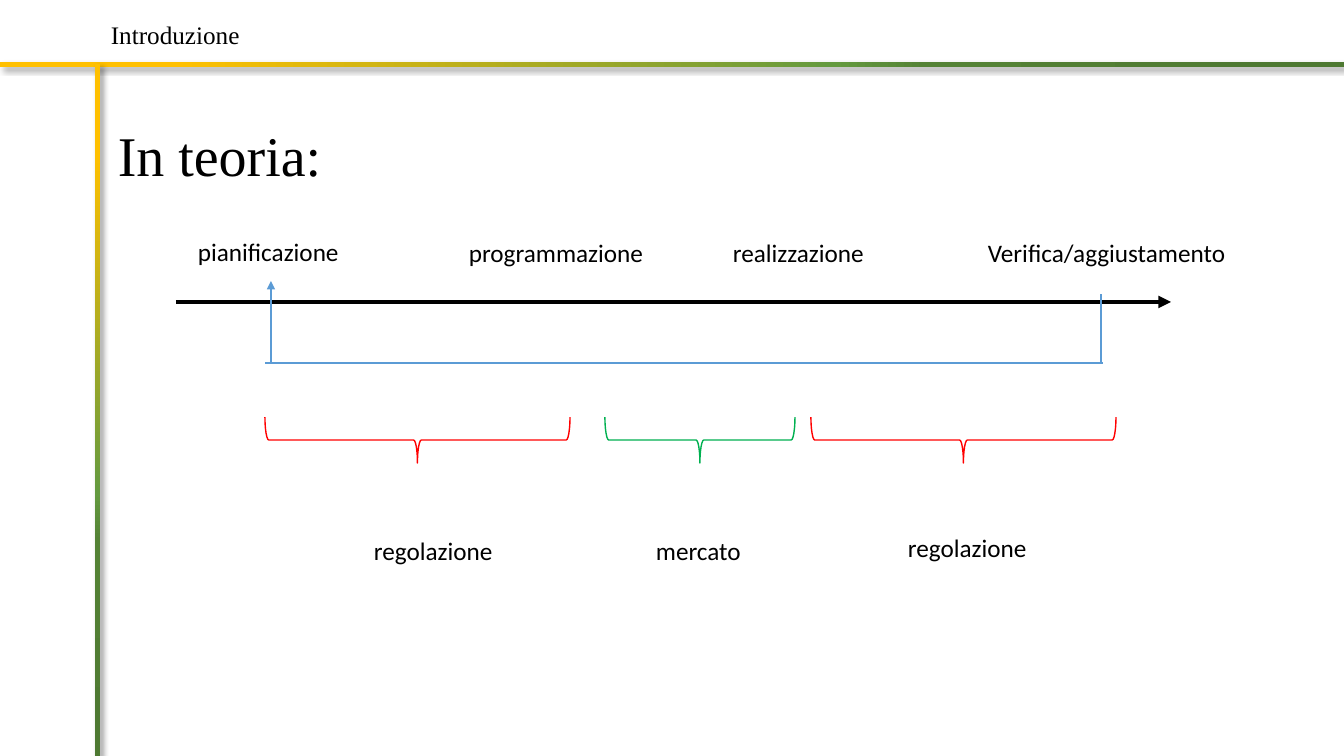
from lxml import etree
from pptx import Presentation, util as u
from pptx.dml.color import RGBColor
from pptx.enum import shapes, text
from pptx.oxml import parse_xml
from pptx.oxml.ns import nsdecls, qn

PX = 914400 / 100.8
BLACK = RGBColor(0x00, 0x00, 0x00)
BLUE = RGBColor(0x5B, 0x9B, 0xD5)
RED = RGBColor(0xFF, 0x00, 0x00)
GREEN = RGBColor(0x00, 0xB0, 0x50)
BAR_STOPS = [
    (13, RGBColor(0xFF, 0xC0, 0x00)),
    (62, RGBColor(0x64, 0x9A, 0x3F)),
    (69, RGBColor(0x54, 0x82, 0x35)),
    (97, RGBColor(0x4E, 0x79, 0x32)),
]


def px(*lengths):
    return [u.Emu(round(n * PX)) for n in lengths]


def write(tf, content, font="Calibri", size=18, color=BLACK, align=None):
    p = tf.paragraphs[0]
    p.alignment = align
    r = p.add_run()
    r.text = content
    r.font.name = font
    r.font.size = u.Pt(size)
    r.font.color.rgb = color


class Deck:
    serif = "Times New Roman"

    def __init__(self, width, height):
        self.prs = Presentation()
        self.prs.slide_width, self.prs.slide_height = px(width, height)
        self.s = self.prs.slides.add_slide(self.prs.slide_layouts[6])

    def label(self, x, y, w, h, content, **fmt):
        tf = self.s.shapes.add_textbox(*px(x, y, w, h)).text_frame
        tf.word_wrap = True
        tf.auto_size = text.MSO_AUTO_SIZE.SHAPE_TO_FIT_TEXT
        write(tf, content, **fmt)

    def bar(self, x, y, w, h, angle):
        sp = self.s.shapes.add_shape(shapes.MSO_SHAPE.RECTANGLE, *px(x, y, w, h))
        sp.line.fill.background()
        sp.fill.gradient()
        sp.fill.gradient_angle = angle
        stops = sp._element.spPr.find(".//" + qn("a:gsLst"))
        for old in list(stops):
            stops.remove(old)
        for pos, color in BAR_STOPS:
            gs = etree.SubElement(stops, qn("a:gs"), pos=str(pos * 1000))
            etree.SubElement(gs, qn("a:srgbClr"), val=str(color))
        sp._element.spPr.append(parse_xml(
            f'<a:effectLst {nsdecls("a")}><a:outerShdw blurRad="50800" dist="38100" '
            'dir="2700000" algn="tl" rotWithShape="0"><a:srgbClr val="000000">'
            '<a:alpha val="40000"/></a:srgbClr></a:outerShdw></a:effectLst>'))

    def line(self, x1, y1, x2, y2, color, width=1, arrow=False):
        c = self.s.shapes.add_connector(
            shapes.MSO_CONNECTOR.STRAIGHT, *px(x1, y1, x2, y2))
        c.line.color.rgb = color
        c.line.width = u.Pt(width)
        if arrow:
            etree.SubElement(c.line._get_or_add_ln(), qn("a:tailEnd"), type="triangle")
        etree.SubElement(c._element.spPr, qn("a:effectLst"))

    def brace(self, x, y, w, h, color):
        """Brace pointing down, given by the box it covers once turned."""
        left, top = x + (w - h) / 2, y + (h - w) / 2
        sp = self.s.shapes.add_shape(shapes.MSO_SHAPE.LEFT_BRACE, *px(left, top, h, w))
        sp.rotation = 270
        sp.shadow.inherit = False
        sp.fill.background()
        sp.line.color.rgb = color
        sp.line.width = u.Pt(1)


def main():
    d = Deck(1344, 756)

    # Frame bars
    d.bar(0, 62, 1344, 5, angle=0)
    d.bar(95, 64, 5, 692, angle=270)

    # Headings
    d.label(101, 14, 1128, 40, "Introduzione", font=d.serif)
    d.label(108, 116, 1128, 78, "In teoria:", font=d.serif, size=40,
            align=text.PP_ALIGN.JUSTIFY)

    # Timeline and its phases
    d.line(176, 302, 1171, 302, BLACK, width=3, arrow=True)
    for x, y, w, phase in [
        (188, 231, 175, "pianificazione"),
        (459, 232, 199, "programmazione"),
        (723, 232, 175, "realizzazione"),
        (978, 232, 273, "Verifica/aggiustamento"),
    ]:
        d.label(x, y, w, 40, phase)

    # Feedback loop
    d.line(1103, 363, 265, 363, BLUE)
    d.line(1101, 363, 1101, 294, BLUE)
    d.line(271, 363, 271, 281, BLUE, arrow=True)

    # Braces and who governs each stretch
    for x, w, color, label_x, label_y, role in [
        (265, 305, RED, 364, 530, "regolazione"),
        (605, 190, GREEN, 646, 530, "mercato"),
        (811, 305, RED, 898, 527, "regolazione"),
    ]:
        d.brace(x, 417, w, 46, color)
        d.label(label_x, label_y, 149, 40, role)

    d.prs.save("out.pptx")


if __name__ == "__main__":
    main()
